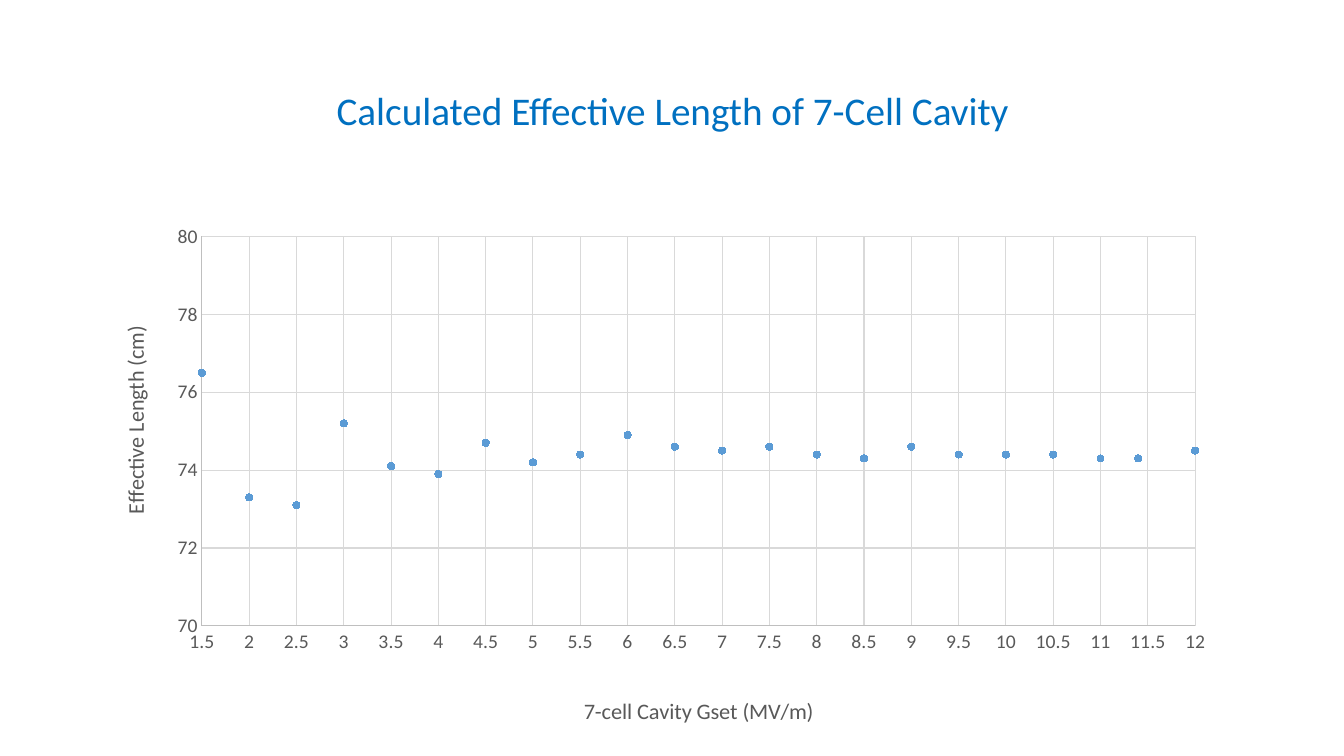
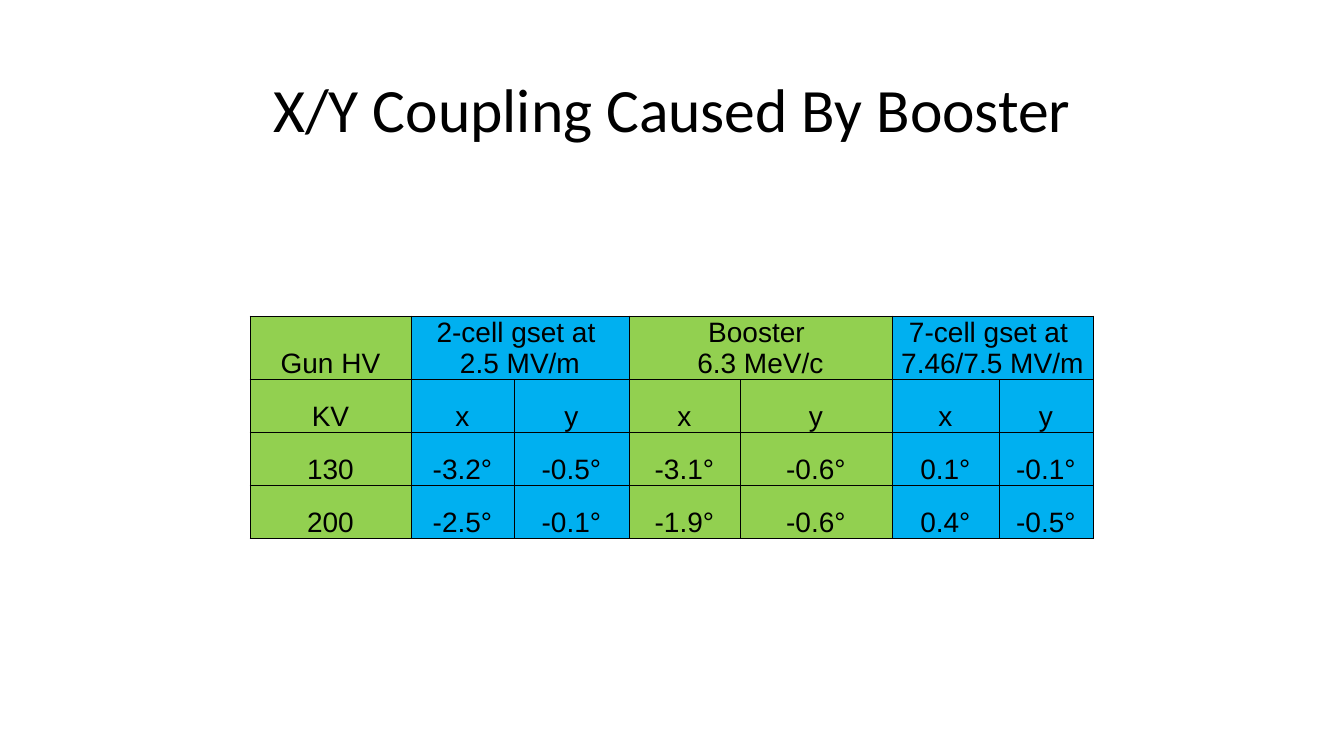
"""Build two slides: a cavity effective-length chart and a booster coupling table."""
from lxml.etree import SubElement
from pptx import Presentation
from pptx.chart.data import XyChartData
from pptx.dml.color import RGBColor
from pptx.enum.chart import XL_CHART_TYPE as CT, XL_MARKER_STYLE as MS, XL_TICK_MARK as TM
from pptx.enum.text import MSO_ANCHOR as ANCHOR, MSO_AUTO_SIZE as AUTO, PP_ALIGN as ALIGN
from pptx.oxml.ns import qn
from pptx.util import Pt

BLACK = RGBColor(0x00, 0x00, 0x00)
TITLE_BLUE = RGBColor(0x00, 0x70, 0xC0)
MARKER_BLUE = RGBColor(0x5B, 0x9B, 0xD5)
AXIS_TEXT = RGBColor(0x59, 0x59, 0x59)
AXIS_LINE = RGBColor(0xBF, 0xBF, 0xBF)
GRID_LINE = RGBColor(0xD9, 0xD9, 0xD9)
GREEN = RGBColor(0x92, 0xD0, 0x50)
CYAN = RGBColor(0x00, 0xB0, 0xF0)

SLIDE_W, SLIDE_H = 1344, 756
SCALE = 12192000 / SLIDE_W
TITLE_BOX = (93, 40, 1159, 146)
CHART_BOX = (93, 168, 1159, 564)
PLOT_BOX = {"x": 0.094, "y": 0.123, "w": 0.857, "h": 0.699}

GSET = [1.5, 2, 2.5, 3, 3.5, 4, 4.5, 5, 5.5, 6, 6.5,
        7, 7.5, 8, 8.5, 9, 9.5, 10, 10.5, 11, 11.4, 12]
LENGTH = [76.5, 73.3, 73.1, 75.2, 74.1, 73.9, 74.7, 74.2, 74.4, 74.9, 74.6,
          74.5, 74.6, 74.4, 74.3, 74.6, 74.4, 74.4, 74.4, 74.3, 74.3, 74.5]
X_AXIS = {"title": "7-cell Cavity Gset (MV/m)", "place": {"x": 0.42, "y": 0.94}, "turn": 0,
          "scale": {"minimum_scale": 1.5, "maximum_scale": 12, "major_unit": 0.5}}
Y_AXIS = {"title": "Effective Length (cm)", "place": {"x": 0.02, "y": 0.28}, "turn": -5400000,
          "scale": {"minimum_scale": 70, "maximum_scale": 80, "major_unit": 2}}

TABLE_AT = (250, 316)
COL_W = [161, 103, 115, 111, 152, 107, 94]
ROW_H = [63, 53, 53, 53]
COL_FILL = [GREEN, CYAN, CYAN, GREEN, GREEN, CYAN, CYAN]
PAIR_STARTS = [1, 3, 5]
ROWS = [
    ["Gun HV", "2-cell gset at \n2.5 MV/m", "", "Booster \n6.3 MeV/c", "",
     "7-cell gset at \n7.46/7.5 MV/m", ""],
    ["KV", "x", "y", "x", "y", "x", "y"],
    ["130", "-3.2°", "-0.5°", "-3.1°", "-0.6°", "0.1°", "-0.1°"],
    ["200", "-2.5°", "-0.1°", "-1.9°", "-0.6°", "0.4°", "-0.5°"],
]


def px(n):
    return round(n * SCALE)


def put(obj, **values):
    for name, value in values.items():
        setattr(obj, name, value)


def set_font(font, size, color, name="Calibri"):
    put(font, name=name, size=Pt(size), bold=False)
    font.color.rgb = color


def set_line(line, color, width=0.75):
    line.color.rgb = color
    line.width = Pt(width)


def set_layout(el, index, place, inner=False):
    layout = el.find(qn("c:layout"))
    if layout is None:
        layout = SubElement(el, qn("c:layout"))
        el.insert(index, layout)
    manual = SubElement(layout, qn("c:manualLayout"))
    if inner:
        SubElement(manual, qn("c:layoutTarget")).set("val", "inner")
    for key in "xy":
        SubElement(manual, qn(f"c:{key}Mode")).set("val", "edge")
    for key, value in place.items():
        SubElement(manual, qn(f"c:{key}")).set("val", str(value))


def add_titled_slide(prs, text, size, color):
    s = prs.slides.add_slide(prs.slide_layouts[5])
    sp = s.shapes.title
    put(sp, **dict(zip(("left", "top", "width", "height"), map(px, TITLE_BOX))))
    tf = sp.text_frame
    put(tf, text=text, word_wrap=True, auto_size=AUTO.NONE, vertical_anchor=ANCHOR.MIDDLE)
    p = tf.paragraphs[0]
    put(p, alignment=ALIGN.CENTER, line_spacing=0.9)
    set_font(p.runs[0].font, size, color)
    return s


def format_axis(axis, info):
    put(axis, has_major_gridlines=True, major_tick_mark=TM.NONE, minor_tick_mark=TM.NONE,
        **info["scale"])
    set_line(axis.major_gridlines.format.line, GRID_LINE)
    set_line(axis.format.line, AXIS_LINE)
    put(axis.tick_labels, number_format="General", number_format_is_linked=False)
    set_font(axis.tick_labels.font, 14, AXIS_TEXT)
    title = axis.axis_title
    tf = title.text_frame
    tf.text = info["title"]
    set_font(tf.paragraphs[0].runs[0].font, 16, AXIS_TEXT)
    body = title._element.find(".//" + qn("a:bodyPr"))
    body.set("rot", str(info["turn"]))
    body.set("vert", "horz")
    set_layout(title._element, 1, info["place"])


def add_length_chart(s):
    data = XyChartData()
    points = data.add_series("Series 1")
    for x, y in zip(GSET, LENGTH):
        points.add_data_point(x, y)
    chart = s.shapes.add_chart(CT.XY_SCATTER, *map(px, CHART_BOX), data).chart
    put(chart, has_legend=False, has_title=False)
    set_font(chart.font, 10, BLACK)
    plot = chart.plots[0]
    plot.vary_by_categories = False
    series = plot.series[0]
    series.format.line.fill.background()
    marker = series.marker
    put(marker, style=MS.CIRCLE, size=5)
    marker.format.fill.solid()
    marker.format.fill.fore_color.rgb = MARKER_BLUE
    set_line(marker.format.line, MARKER_BLUE)
    for axis, info in ((chart.category_axis, X_AXIS), (chart.value_axis, Y_AXIS)):
        format_axis(axis, info)
    set_layout(chart._chartSpace.find(".//" + qn("c:plotArea")), 0, PLOT_BOX, inner=True)


def format_cell(cell, text, color):
    put(cell, text=text, vertical_anchor=ANCHOR.BOTTOM, margin_left=px(1),
        margin_right=px(1), margin_top=px(1), margin_bottom=0)
    for p in cell.text_frame.paragraphs:
        p.alignment = ALIGN.CENTER
        set_font(p.font, 20, BLACK, "Arial")
        for r in p.runs:
            set_font(r.font, 20, BLACK, "Arial")
    tc_pr = cell._tc.get_or_add_tcPr()
    for side in "LRTB":
        ln = SubElement(tc_pr, qn(f"a:ln{side}"), w=str(Pt(0.5)))
        fill = SubElement(ln, qn("a:solidFill"))
        SubElement(fill, qn("a:srgbClr"), val=str(BLACK))
    cell.fill.solid()
    cell.fill.fore_color.rgb = color


def add_coupling_table(s):
    size = (sum(COL_W), sum(ROW_H))
    table = s.shapes.add_table(len(ROW_H), len(COL_W), *map(px, TABLE_AT + size)).table
    put(table, first_row=False, horz_banding=False)
    for col, width in zip(table.columns, COL_W):
        col.width = px(width)
    for row, height, texts in zip(table.rows, ROW_H, ROWS):
        row.height = px(height)
        for cell, text, color in zip(row.cells, texts, COL_FILL):
            format_cell(cell, text, color)
    for c in PAIR_STARTS:
        table.cell(0, c).merge(table.cell(0, c + 1))


def main():
    prs = Presentation()
    put(prs, slide_width=px(SLIDE_W), slide_height=px(SLIDE_H))
    add_length_chart(add_titled_slide(
        prs, "Calculated Effective Length of 7-Cell Cavity", 28, TITLE_BLUE))
    add_coupling_table(add_titled_slide(prs, "X/Y Coupling Caused By Booster", 44, BLACK))
    prs.save("out.pptx")


if __name__ == "__main__":
    main()
